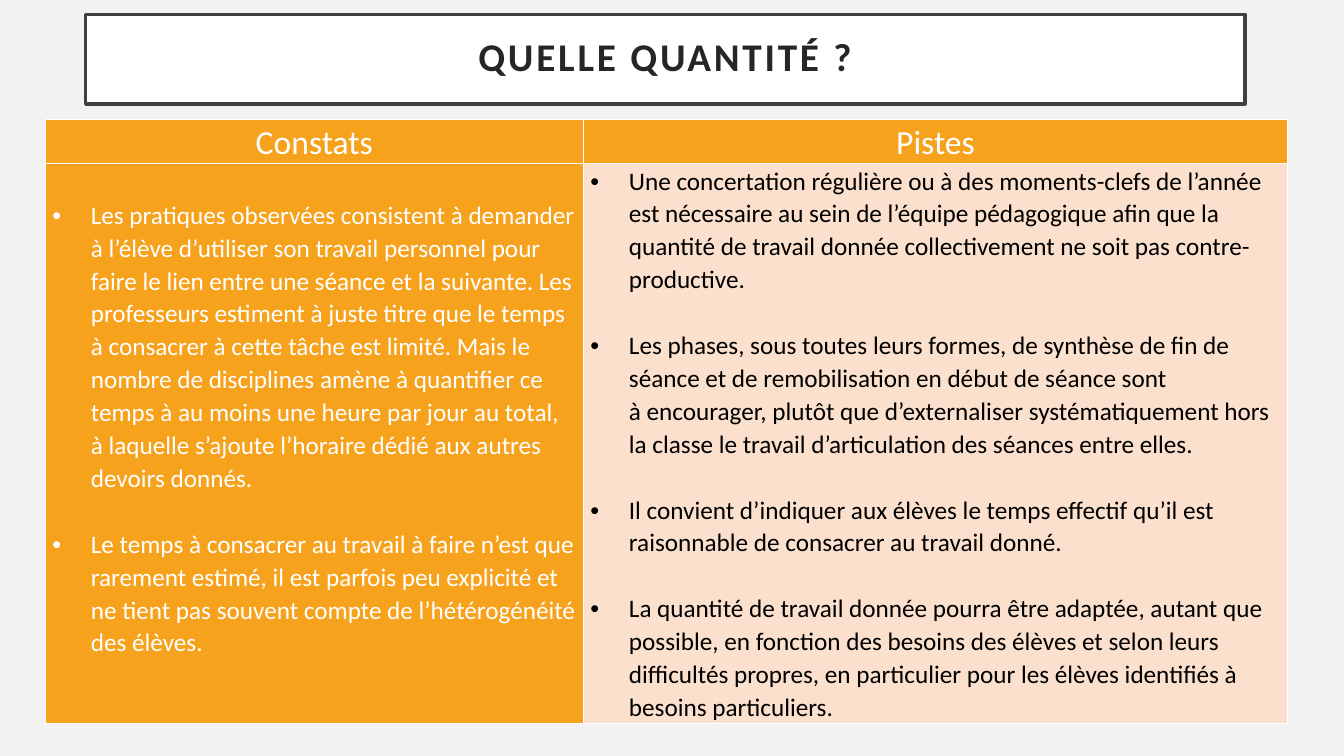
from lxml import etree
from pptx import Presentation
from pptx import util as u
from pptx.dml.color import RGBColor
from pptx.enum import text
from pptx.oxml import ns

WHITE = RGBColor(0xFF, 0xFF, 0xFF)
BLACK = RGBColor(0, 0, 0)
ORANGE = RGBColor(0xF6, 0xA2, 0x1D)
PEACH = RGBColor(0xFB, 0xE0, 0xCD)
DARK = RGBColor(0x26, 0x26, 0x26)
FRAME = RGBColor(0x40, 0x40, 0x40)
BACKGROUND = RGBColor(0xF2, 0xF2, 0xF2)

FINDINGS = [
    "Les pratiques observées consistent à demander à l’élève d’utiliser son travail personnel "
    "pour faire le lien entre une séance et la suivante. Les professeurs estiment à juste titre "
    "que le temps à consacrer à cette tâche est limité. Mais le nombre de disciplines amène à "
    "quantifier ce temps à au moins une heure par jour au total, à laquelle s’ajoute l’horaire "
    "dédié aux autres devoirs donnés.",
    "Le temps à consacrer au travail à faire n’est que rarement estimé, il est parfois peu "
    "explicité et ne tient pas souvent compte de l’hétérogénéité des élèves.",
]
LEADS = [
    "Une concertation régulière ou à des moments-clefs de l’année est nécessaire au sein de "
    "l’équipe pédagogique afin que la quantité de travail donnée collectivement ne soit pas "
    "contre-productive.",
    "Les phases, sous toutes leurs formes, de synthèse de fin de séance et de remobilisation "
    "en début de séance sont \nà encourager, plutôt que d’externaliser systématiquement hors "
    "la classe le travail d’articulation des séances entre elles.",
    "Il convient d’indiquer aux élèves le temps effectif qu’il est raisonnable de consacrer au "
    "travail donné.",
    "La quantité de travail donnée pourra être adaptée, autant que possible, en fonction des "
    "besoins des élèves et selon leurs difficultés propres, en particulier pour les élèves "
    "identifiés à besoins particuliers.",
]


def format_runs(paragraph, size, color, bold=False):
    for run in paragraph.runs:
        run.font.name = "Calibri"
        run.font.size = u.Pt(size)
        run.font.bold = bold
        run.font.color.rgb = color


def format_cell(cell, fill):
    cell.margin_left = cell.margin_right = u.Cm(0.18)
    cell.margin_top = cell.margin_bottom = 0
    cell.vertical_anchor = text.MSO_ANCHOR.MIDDLE
    properties = cell._tc.get_or_add_tcPr()
    for side in ("a:lnL", "a:lnR", "a:lnT", "a:lnB"):
        border = etree.SubElement(properties, ns.qn(side), w=str(u.Pt(1)))
        solid = etree.SubElement(border, ns.qn("a:solidFill"))
        etree.SubElement(solid, ns.qn("a:srgbClr"), val=str(WHITE))
    cell.fill.solid()
    cell.fill.fore_color.rgb = fill


presentation = Presentation()
presentation.slide_width = u.Cm(33.87)
presentation.slide_height = u.Cm(19.05)
slide = presentation.slides.add_slide(presentation.slide_layouts[5])
slide.background.fill.solid()
slide.background.fill.fore_color.rgb = BACKGROUND

# Framed title
title = slide.shapes.title
title.left, title.top, title.width, title.height = u.Cm(2.16), u.Cm(0.36), u.Cm(29.21), u.Cm(2.26)
title.fill.solid()
title.fill.fore_color.rgb = WHITE
title.line.color.rgb = FRAME
title.line.width = u.Pt(2.5)
frame = title.text_frame
frame.text = "QUELLE QUANTITÉ ?"
frame.vertical_anchor = text.MSO_ANCHOR.MIDDLE
frame.margin_left = frame.margin_right = frame.margin_top = frame.margin_bottom = u.Cm(0.5)
heading = frame.paragraphs[0]
heading.alignment = text.PP_ALIGN.CENTER
heading.line_spacing = 0.9
format_runs(heading, 28, DARK, bold=True)
heading.runs[0].font._element.set("spc", "200")

# Table of findings and leads
table = slide.shapes.add_table(2, 2, u.Cm(1.14), u.Cm(3.02), u.Cm(31.31), u.Cm(15.2)).table
table.rows[0].height = u.Cm(1.1)
table.rows[1].height = u.Cm(14.1)

columns = [
    ("Constats", 13.56, FINDINGS, ORANGE, WHITE),
    ("Pistes", 17.75, LEADS, PEACH, BLACK),
]
for index, (label, width, items, fill, color) in enumerate(columns):
    table.columns[index].width = u.Cm(width)

    # Column heading
    header = table.cell(0, index)
    format_cell(header, ORANGE)
    header.text_frame.text = label
    paragraph = header.text_frame.paragraphs[0]
    paragraph.alignment = text.PP_ALIGN.CENTER
    paragraph.line_spacing = 1.07
    format_runs(paragraph, 24, WHITE)

    # Bulleted list, one line of space between items
    body = table.cell(1, index)
    format_cell(body, fill)
    for number, item in enumerate(items):
        paragraph = body.text_frame.paragraphs[0] if number == 0 else body.text_frame.add_paragraph()
        paragraph.text = item
        paragraph.line_spacing = 1.07
        if number:
            paragraph.space_before = u.Pt(23.5)
        format_runs(paragraph, 18, color)
        properties = paragraph._p.get_or_add_pPr()
        properties.set("marL", str(u.Cm(0.97)))
        properties.set("indent", str(-u.Cm(0.97)))
        etree.SubElement(properties, ns.qn("a:buFont"), typeface="Arial")
        etree.SubElement(properties, ns.qn("a:buChar"), char="•")

# The findings sit slightly above the middle
table.cell(1, 0).margin_bottom = u.Cm(0.76)

presentation.save("out.pptx")
